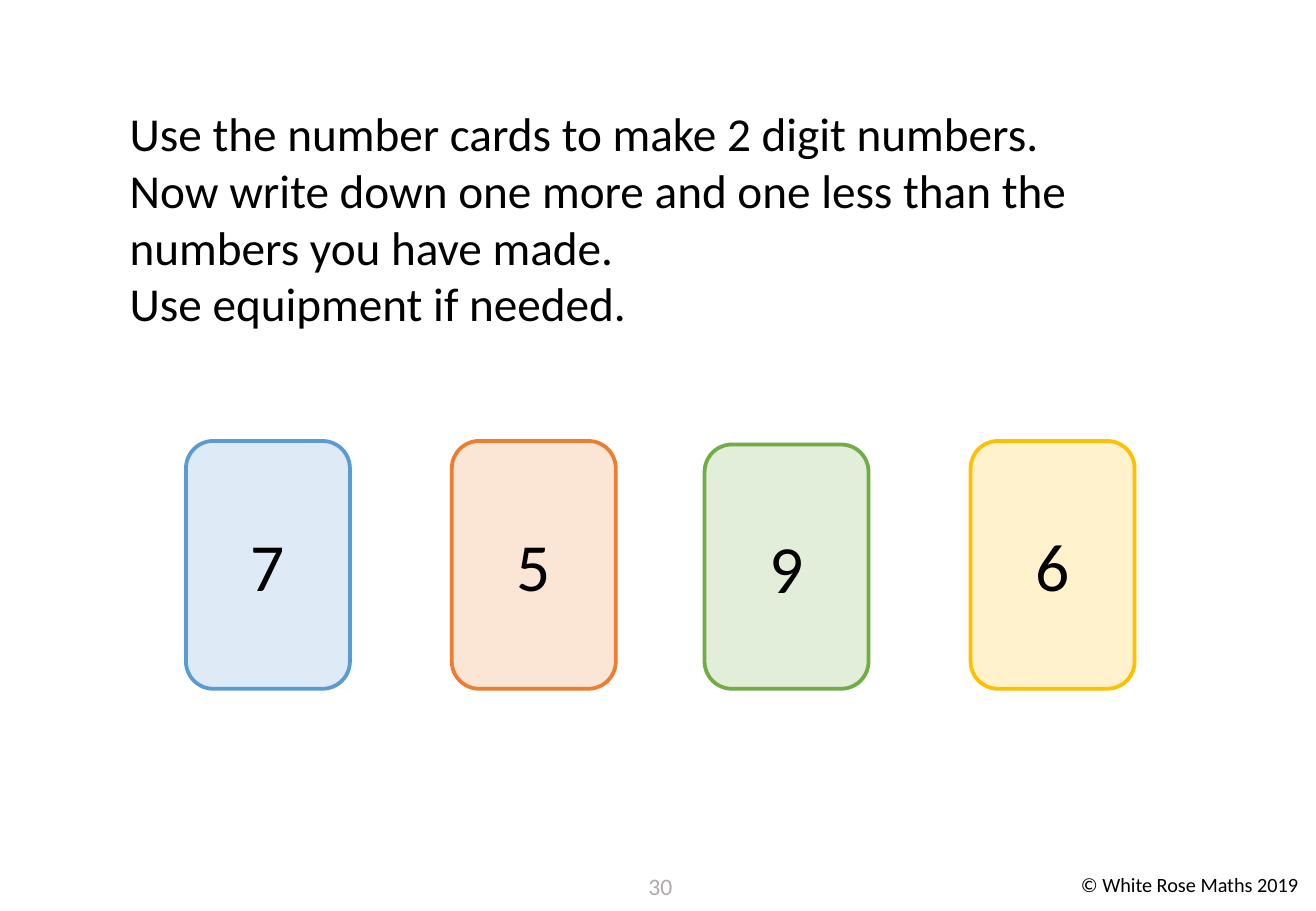
"""Build a slide of four number cards for making 2 digit numbers."""
from lxml import etree
from pptx import Presentation
from pptx.dml.color import RGBColor
from pptx.enum.shapes import MSO_SHAPE
from pptx.enum.text import MSO_ANCHOR, PP_ALIGN
from pptx.oxml.ns import qn
from pptx.util import Pt

ROUNDED = MSO_SHAPE.ROUNDED_RECTANGLE
MIDDLE = MSO_ANCHOR.MIDDLE
LEFT, CENTER = PP_ALIGN.LEFT, PP_ALIGN.CENTER

FONT = "Calibri"
COLORS = {
    "text": "000000",
    "page_number": "AFABAB",
    "blue": "5B9BD5",
    "orange": "ED7D31",
    "green": "70AD47",
    "yellow": "FFC000",
}
CARD_WIDTH = 97.2
CARD_BOTTOM = 408.3
CARDS = [
    ("7", "blue", 110.2, 261.4),
    ("5", "orange", 267.8, 261.4),
    ("9", "green", 417.6, 263.5),
    ("6", "yellow", 575.3, 261.4),
]
INSTRUCTIONS = [
    "Use the number cards to make 2 digit numbers.",
    "Now write down one more and one less than the numbers you have made.",
    "Use equipment if needed.",
]


def rgb(name):
    return RGBColor.from_string(COLORS[name])


def write_lines(text_frame, lines, size, color="text", alignment=LEFT):
    for index, line in enumerate(lines):
        paragraph = text_frame.paragraphs[0] if index == 0 else text_frame.add_paragraph()
        paragraph.alignment = alignment
        run = paragraph.add_run()
        run.text = line
        run.font.name = FONT
        run.font.size = Pt(size)
        run.font.color.rgb = rgb(color)


def add_text(slide, box, lines, size, color="text", alignment=LEFT):
    text_box = slide.shapes.add_textbox(*(Pt(length) for length in box))
    text_box.text_frame.word_wrap = True
    write_lines(text_box.text_frame, lines, size, color, alignment)


def add_card(slide, digit, color, left, top):
    card = slide.shapes.add_shape(
        ROUNDED, Pt(left), Pt(top), Pt(CARD_WIDTH), Pt(CARD_BOTTOM - top))
    card.shadow.inherit = False
    card.fill.solid()
    card.fill.fore_color.rgb = rgb(color)
    fill_color = card.fill._xPr.find(qn("a:solidFill")).find(qn("a:srgbClr"))
    etree.SubElement(fill_color, qn("a:alpha"), val="20000")
    card.line.color.rgb = rgb(color)
    card.line.width = Pt(2.25)
    card.text_frame.vertical_anchor = MIDDLE
    write_lines(card.text_frame, [digit], 40, alignment=CENTER)


def main():
    presentation = Presentation()
    presentation.slide_width = Pt(780)
    presentation.slide_height = Pt(540)
    slide = presentation.slides.add_slide(presentation.slide_layouts[6])
    add_text(slide, (633.6, 513.4, 146.4, 21.6), ["© White Rose Maths 2019"], 12)
    add_text(slide, (373, 513.4, 36.7, 28.8), ["30"], 14, "page_number", CENTER)
    add_text(slide, (69.8, 58.3, 634.3, 143.3), INSTRUCTIONS, 28)
    for card in CARDS:
        add_card(slide, *card)
    presentation.save("out.pptx")


if __name__ == "__main__":
    main()
